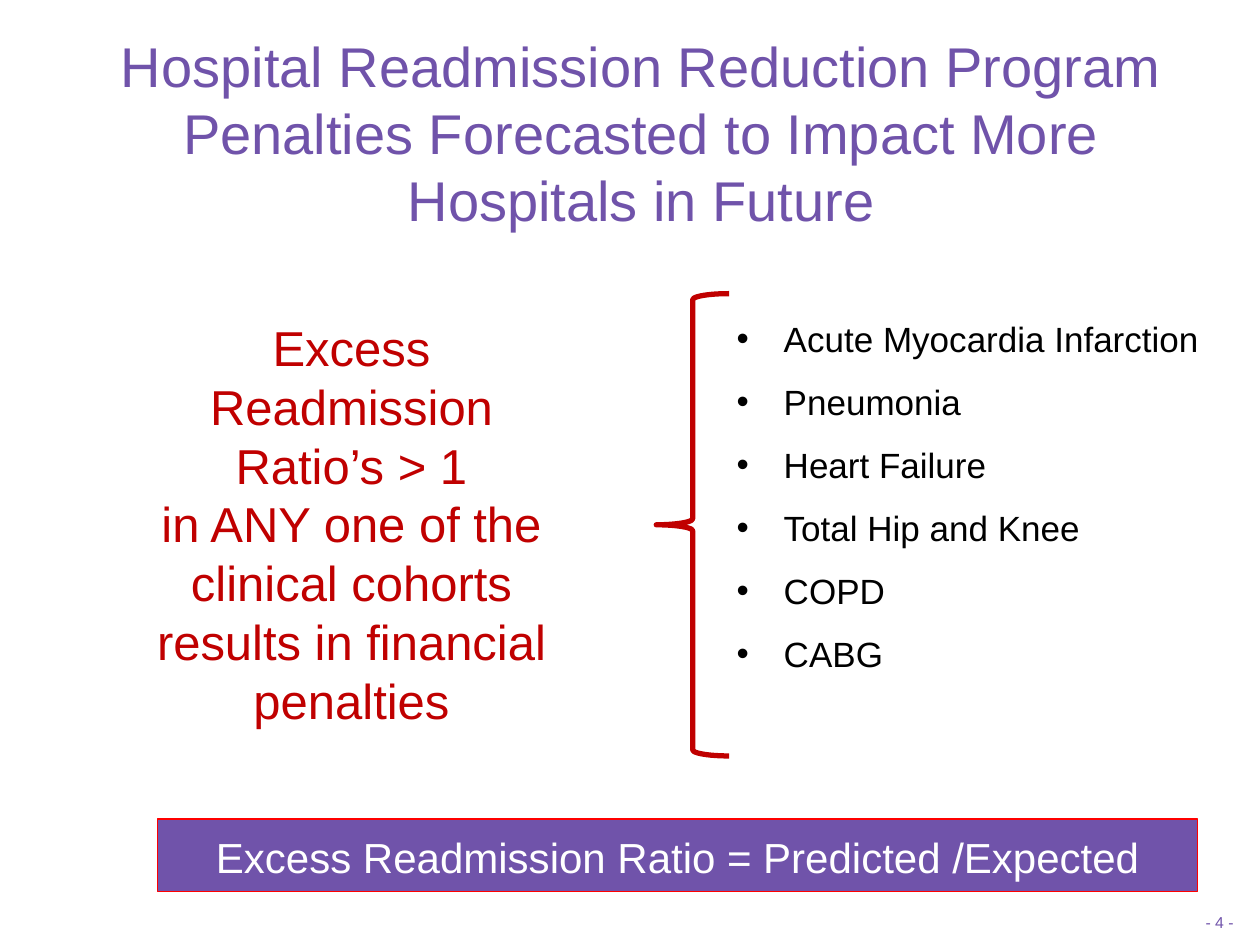
from lxml import etree
from pptx import Presentation, util as u
from pptx.dml.color import RGBColor
from pptx.enum import shapes, text
from pptx.oxml.ns import qn

COLORS = {
    "purple": "7053AA",
    "crimson": "C00000",
    "red": "FF0000",
    "black": "000000",
    "white": "FFFFFF",
}
FONT = "Arial"
COHORTS = [
    "Acute Myocardia Infarction",
    "Pneumonia",
    "Heart Failure",
    "Total Hip and Knee",
    "COPD",
    "CABG",
]


class SlideBuilder:
    def __init__(self, slide):
        self.slide = slide

    def color(self, name):
        return RGBColor.from_string(COLORS[name])

    def add_text(self, shape, lines, size, color, inset=(0.25, 0.25),
                 anchor=text.MSO_ANCHOR.TOP, align=text.PP_ALIGN.CENTER,
                 bullets=False):
        """Fill a shape with one paragraph per line; a newline is a line break."""
        frame = shape.text_frame
        frame.word_wrap = True
        frame.vertical_anchor = anchor
        frame.margin_left = frame.margin_right = u.Cm(inset[0])
        frame.margin_top = frame.margin_bottom = u.Cm(inset[1])
        for index, line in enumerate(lines):
            para = frame.add_paragraph() if index else frame.paragraphs[0]
            para.alignment = align
            if bullets:
                self.add_bullet(para)
                para.space_before = u.Pt(12 if index else 0)
            for part, words in enumerate(line.split("\n")):
                if part:
                    para.add_line_break()
                span = para.add_run()
                span.text = words
                span.font.name = FONT
                span.font.size = u.Pt(size)
                span.font.color.rgb = self.color(color)

    def add_bullet(self, para):
        props = para._p.get_or_add_pPr()
        props.set("marL", str(u.Cm(0.95)))
        props.set("indent", str(-u.Cm(0.95)))
        etree.SubElement(props, qn("a:buFont"), typeface=FONT)
        etree.SubElement(props, qn("a:buChar"), char="•")

    def text_box(self, place, lines, size, color, **style):
        box = self.slide.shapes.add_textbox(*map(u.Cm, place))
        self.add_text(box, lines, size, color, **style)

    def shape(self, kind, place, line, width, fill=None):
        shape = self.slide.shapes.add_shape(kind, *map(u.Cm, place))
        shape.shadow.inherit = False
        shape.line.color.rgb = self.color(line)
        shape.line.width = u.Pt(width)
        if fill:
            shape.fill.solid()
            shape.fill.fore_color.rgb = self.color(fill)
        else:
            shape.fill.background()
        return shape


def main():
    deck = Presentation()
    deck.slide_width, deck.slide_height = u.Cm(25.4), u.Cm(19.05)
    page = SlideBuilder(deck.slides.add_slide(deck.slide_layouts[6]))

    page.text_box(
        (1.07, 1.07, 23.72, 3.18),
        ["Hospital Readmission Reduction Program\n"
         "Penalties Forecasted to Impact More Hospitals in Future"],
        32, "purple", inset=(0.25, 0.13), anchor=text.MSO_ANCHOR.MIDDLE)
    page.text_box(
        (14.6, 6.27, 23.72, 12.52), COHORTS, 20, "black",
        inset=(0.25, 0.13), align=text.PP_ALIGN.LEFT, bullets=True)
    page.text_box(
        (23.85, 18.14, 1.47, 0.91), ["- 4 -"], 9, "purple",
        inset=(0.28, 0.15), anchor=text.MSO_ANCHOR.MIDDLE)
    page.text_box(
        (2.54, 6.15, 9.09, 8.89),
        ["Excess Readmission Ratio’s > 1",
         "in ANY one of the clinical cohorts",
         "results in financial penalties"],
        28, "crimson")

    page.shape(shapes.MSO_SHAPE.LEFT_BRACE, (13.23, 5.92, 1.47, 9.32),
               "crimson", 3)
    formula = page.shape(shapes.MSO_SHAPE.RECTANGLE, (3.18, 16.51, 20.96, 1.47),
                         "red", 0.75, fill="purple")
    page.add_text(formula, ["Excess Readmission Ratio = Predicted /Expected"],
                  24, "white")

    deck.save("out.pptx")


if __name__ == "__main__":
    main()
